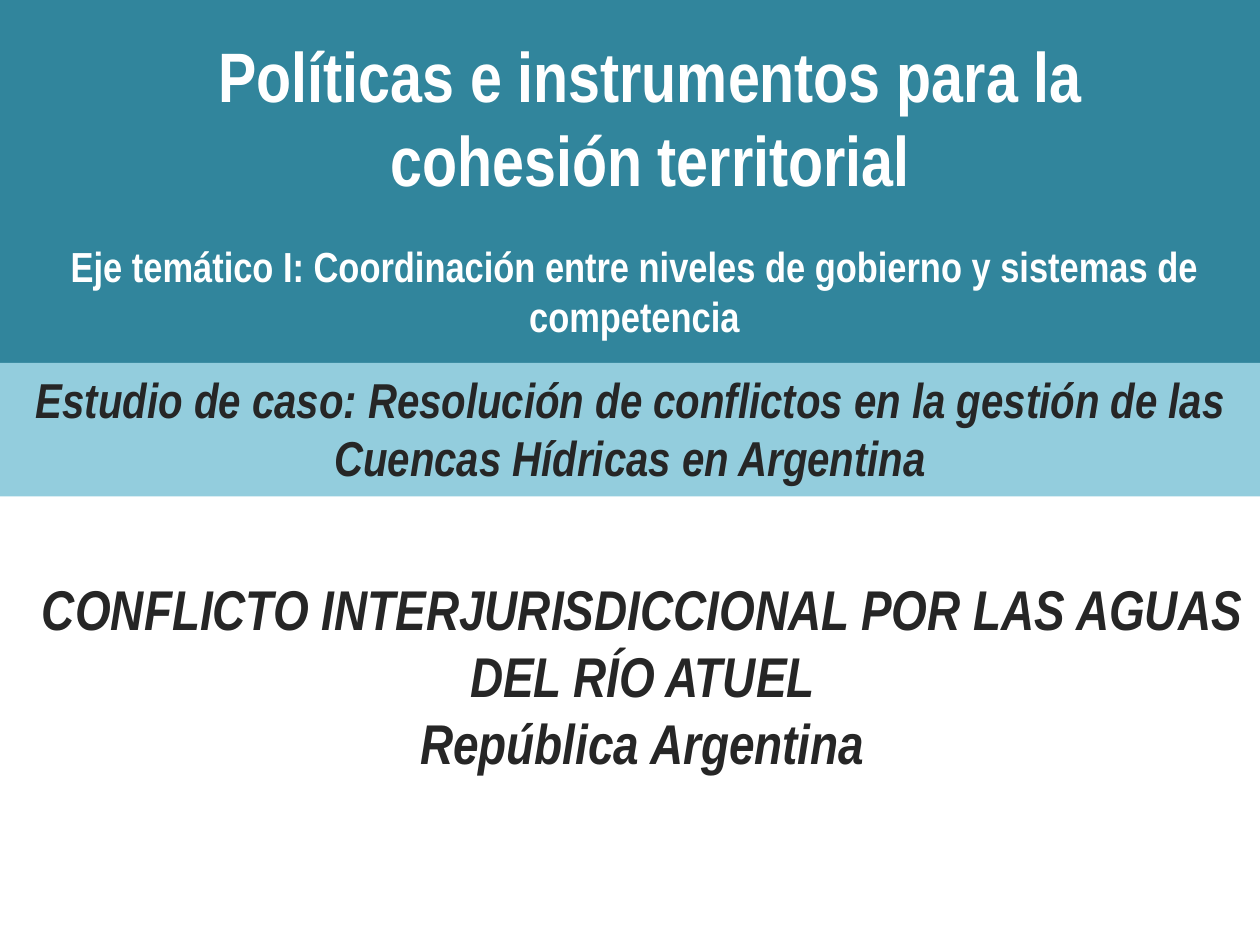
from pptx import Presentation
from pptx.dml.color import RGBColor
from pptx.enum.shapes import MSO_SHAPE
from pptx.enum.text import MSO_ANCHOR, PP_ALIGN
from pptx.util import Inches, Pt

RECT = MSO_SHAPE.RECTANGLE
CENTER = PP_ALIGN.CENTER
TOP, MIDDLE = MSO_ANCHOR.TOP, MSO_ANCHOR.MIDDLE

TEAL = RGBColor(0x31, 0x85, 0x9C)
LIGHT_TEAL = RGBColor(0x93, 0xCD, 0xDD)
WHITE = RGBColor(0xFF, 0xFF, 0xFF)
DARK = RGBColor(0x26, 0x26, 0x26)

SLIDE_W, SLIDE_H = 10, 7.5
HEADER_H, CASE_H = 2.88, 1.06


class SlideBuilder:
    font = "Arial Narrow"

    def __init__(self, slide):
        self.s = slide

    def band(self, top, height, color):
        sp = self.s.shapes.add_shape(
            RECT, 0, Inches(top), Inches(SLIDE_W), Inches(height))
        sp.shadow.inherit = False
        sp.fill.solid()
        sp.fill.fore_color.rgb = color
        sp.line.fill.background()

    def text(self, text, left, top, width, height, size, color,
             italic=False, anchor=TOP, margin_left=0.1):
        sp = self.s.shapes.add_textbox(
            Inches(left), Inches(top), Inches(width), Inches(height))
        tf = sp.text_frame
        tf.word_wrap = True
        tf.vertical_anchor = anchor
        tf.margin_left = Inches(margin_left)
        p = tf.paragraphs[0]
        p.text = text
        p.alignment = CENTER
        for r in p.runs:
            r.font.name = self.font
            r.font.size = Pt(size)
            r.font.bold = True
            r.font.italic = italic
            r.font.color.rgb = color


def main():
    prs = Presentation()
    prs.slide_width, prs.slide_height = Inches(SLIDE_W), Inches(SLIDE_H)
    b = SlideBuilder(prs.slides.add_slide(prs.slide_layouts[6]))

    # Background bands
    b.band(0, HEADER_H, TEAL)
    b.band(HEADER_H, CASE_H, LIGHT_TEAL)

    # Header: title and theme
    b.text("Políticas e instrumentos para la cohesión territorial",
           0.59, 0.21, 9.14, 1.43, 40, WHITE)
    b.text("Eje temático I: Coordinación entre niveles de gobierno y "
           "sistemas de competencia",
           0.35, 1.86, 9.37, 0.9, 24, WHITE)

    # Case study
    b.text("Estudio de caso: Resolución de conflictos en la gestión de las "
           "Cuencas Hídricas en Argentina",
           0, HEADER_H, SLIDE_W, 1.5, 28, DARK, italic=True)

    # Conflict title
    b.text("CONFLICTO INTERJURISDICCIONAL POR LAS AGUAS DEL RÍO ATUEL\n"
           "República Argentina",
           0, 4.69, SLIDE_W, 1.34, 32, DARK, italic=True,
           anchor=MIDDLE, margin_left=0.3)

    prs.save("out.pptx")


if __name__ == "__main__":
    main()
